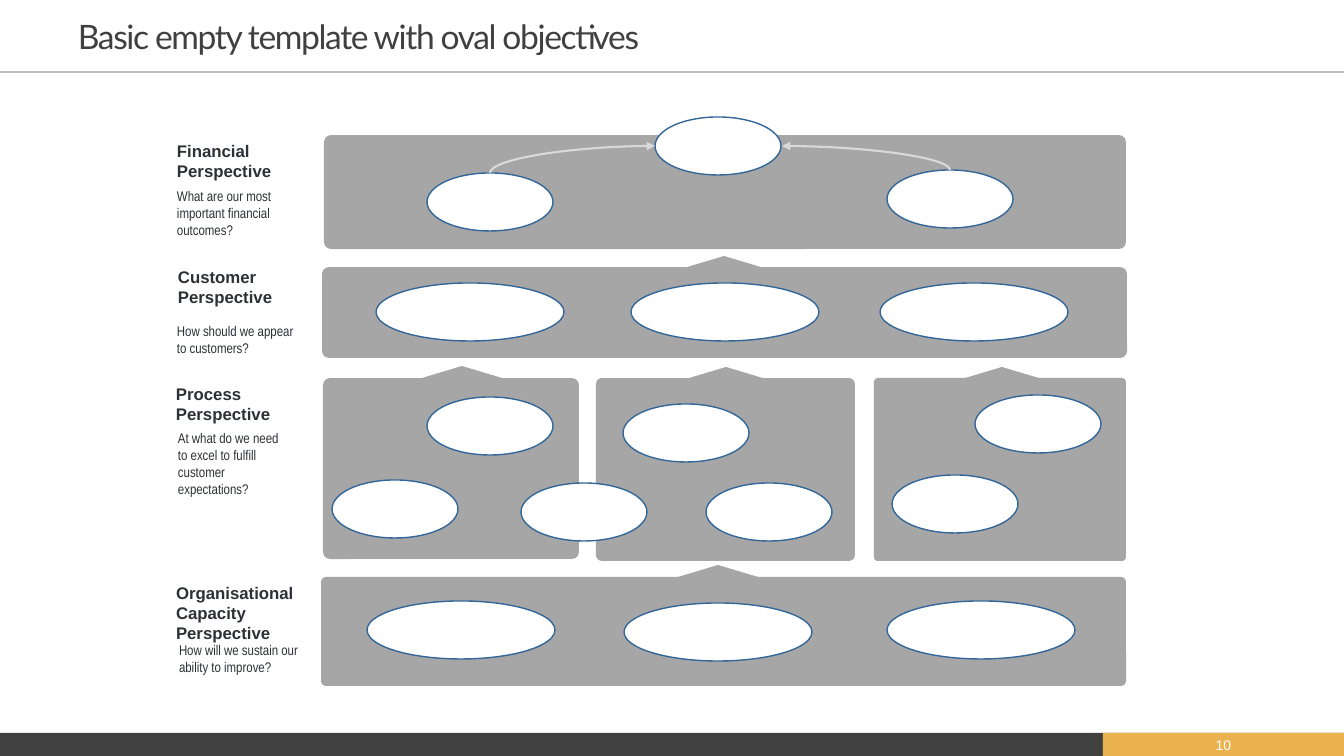
"""Build a strategy map template slide with four perspectives and oval objectives."""
from pptx import Presentation
from pptx.dml.color import RGBColor
from pptx.enum.shapes import MSO_CONNECTOR as Link, MSO_SHAPE as Shape
from pptx.enum.text import MSO_ANCHOR as Anchor, MSO_AUTO_SIZE as Fit, PP_ALIGN as Align
from pptx.oxml.ns import qn
from pptx.util import Emu, Pt

THEME = {
    "white": "FFFFFF", "dark": "404040", "gold": "EBB250", "rule": "BFBFBF",
    "panel": "A6A6A6", "oval": "336699", "arrow": "D9D9D9",
    "title": {"name": "Lato", "size": Pt(24), "color": "404040"},
    "label": {"name": "Arial", "size": Pt(12), "color": "2E3037", "bold": True},
    "question": {"name": "Arial Narrow", "size": Pt(10), "color": "2E3037"},
    "number": {"name": "Arial", "size": Pt(10), "color": "FFFFFF"},
}
SCALE = 12192000 / 1344


def draw(kind, box, fill, outline=None):
    shape = page.shapes.add_shape(kind, *[Emu(round(v * SCALE)) for v in box])
    shape.shadow.inherit = False
    shape.fill.solid()
    shape.fill.fore_color.rgb = RGBColor.from_string(fill)
    if outline:
        shape.line.color.rgb = RGBColor.from_string(outline)
        shape.line.width = Pt(1)
    else:
        shape.line.fill.background()
    return shape


def write(shape, text, style, inset, anchor=Anchor.MIDDLE, align=Align.LEFT, fit=Fit.NONE):
    frame = shape.text_frame
    side, edge = [Emu(round(v * SCALE)) for v in inset]
    layout = {"word_wrap": True, "auto_size": fit, "vertical_anchor": anchor,
              "margin_left": side, "margin_right": side,
              "margin_top": edge, "margin_bottom": edge}
    for name, value in layout.items():
        setattr(frame, name, value)
    para = frame.paragraphs[0]
    para.text = text
    para.alignment = align
    for span in para.runs:
        for name, value in THEME[style].items():
            if name == "color":
                span.font.color.rgb = RGBColor.from_string(value)
            else:
                setattr(span.font, name, value)
    return para


deck = Presentation()
deck.slide_width, deck.slide_height = Emu(round(1344 * SCALE)), Emu(round(756 * SCALE))
page = deck.slides.add_slide(deck.slide_layouts[6])

draw(Shape.RECTANGLE, (0, 733, 1344, 23), THEME["dark"])
draw(Shape.RECTANGLE, (1103, 733, 241, 23), THEME["gold"])
number_box = page.shapes.add_textbox(*[Emu(round(v * SCALE)) for v in (1103, 732, 241, 25)])
write(number_box, "10", "number", (10, 0), align=Align.CENTER)
title_box = page.shapes.add_textbox(*[Emu(round(v * SCALE)) for v in (68, 4, 980, 64)])
title = write(title_box, "Basic empty template with oval objectives", "title", (10, 0))
title.runs[0].font._element.set("spc", "-100")

panels = [
    (324, 135, 802, 114, 7), (322, 267, 805, 91, 7), (323, 378, 256, 181, 7),
    (596, 378, 259, 183, 6), (874, 378, 252, 183, 4), (321, 577, 805, 109, 5),
]
for left, top, width, height, radius in panels:
    panel = draw(Shape.ROUNDED_RECTANGLE, (left, top, width, height), THEME["panel"])
    panel.adjustments[0] = radius / height

for left, top in [(684, 256), (422, 366), (686, 367), (962, 367), (678, 565)]:
    draw(Shape.ISOSCELES_TRIANGLE, (left, top, 80, 12), THEME["panel"])

perspectives = [
    ("Financial Perspective", (172, 136, 126, 50),
     "What are our most important financial outcomes?", (172, 183, 144, 60)),
    ("Customer Perspective", (173, 262, 120, 50),
     "How should we appear to customers?", (172, 318, 137, 43)),
    ("Process Perspective", (171, 379, 125, 50),
     "At what do we need to excel to fulfill customer expectations?", (173, 425, 117, 78)),
    ("Organisational\nCapacity\nPerspective", (171, 577, 134, 71),
     "How will we sustain our ability to improve?", (174, 637, 144, 43)),
]
for label, label_box, question, question_box in perspectives:
    write(draw(Shape.RECTANGLE, label_box, THEME["white"]), label, "label", (5, 5))
    box = page.shapes.add_textbox(*[Emu(round(v * SCALE)) for v in question_box])
    write(box, question, "question", (5, 5), Anchor.TOP, fit=Fit.SHAPE_TO_FIT_TEXT)

ovals = {
    126: [(655, 117), (427, 173), (887, 170), (427, 397), (332, 480), (521, 483),
          (623, 404), (706, 483), (975, 395), (892, 475)],
    188: [(376, 283), (631, 283), (880, 283), (367, 601), (624, 603), (887, 601)],
}
for width, corners in ovals.items():
    for left, top in corners:
        draw(Shape.OVAL, (left, top, width, 58), THEME["white"], THEME["oval"])

links = [
    (Link.STRAIGHT, (0, 72, 1344, 72), 0, "rule", 1),
    (Link.CURVE, (586, 242, 559, 77), 90, "arrow", 1.5),
    (Link.CURVE, (854, 242, 878, 74), 270, "arrow", 1.5),
]
for kind, ends, turn, color, weight in links:
    link = page.shapes.add_connector(kind, *[Emu(round(v * SCALE)) for v in ends])
    link.line.color.rgb = RGBColor.from_string(THEME[color])
    link.line.width = Pt(weight)
    props = link._element.spPr
    if kind == Link.CURVE:
        props.find(qn("a:xfrm")).set("rot", str(turn * 60000))
        props.find(qn("a:prstGeom")).set("prst", "curvedConnector2")
        line = props.find(qn("a:ln"))
        line.append(line.makeelement(qn("a:tailEnd"), {"type": "triangle"}))
    props.append(props.makeelement(qn("a:effectLst"), {}))

deck.save("out.pptx")
